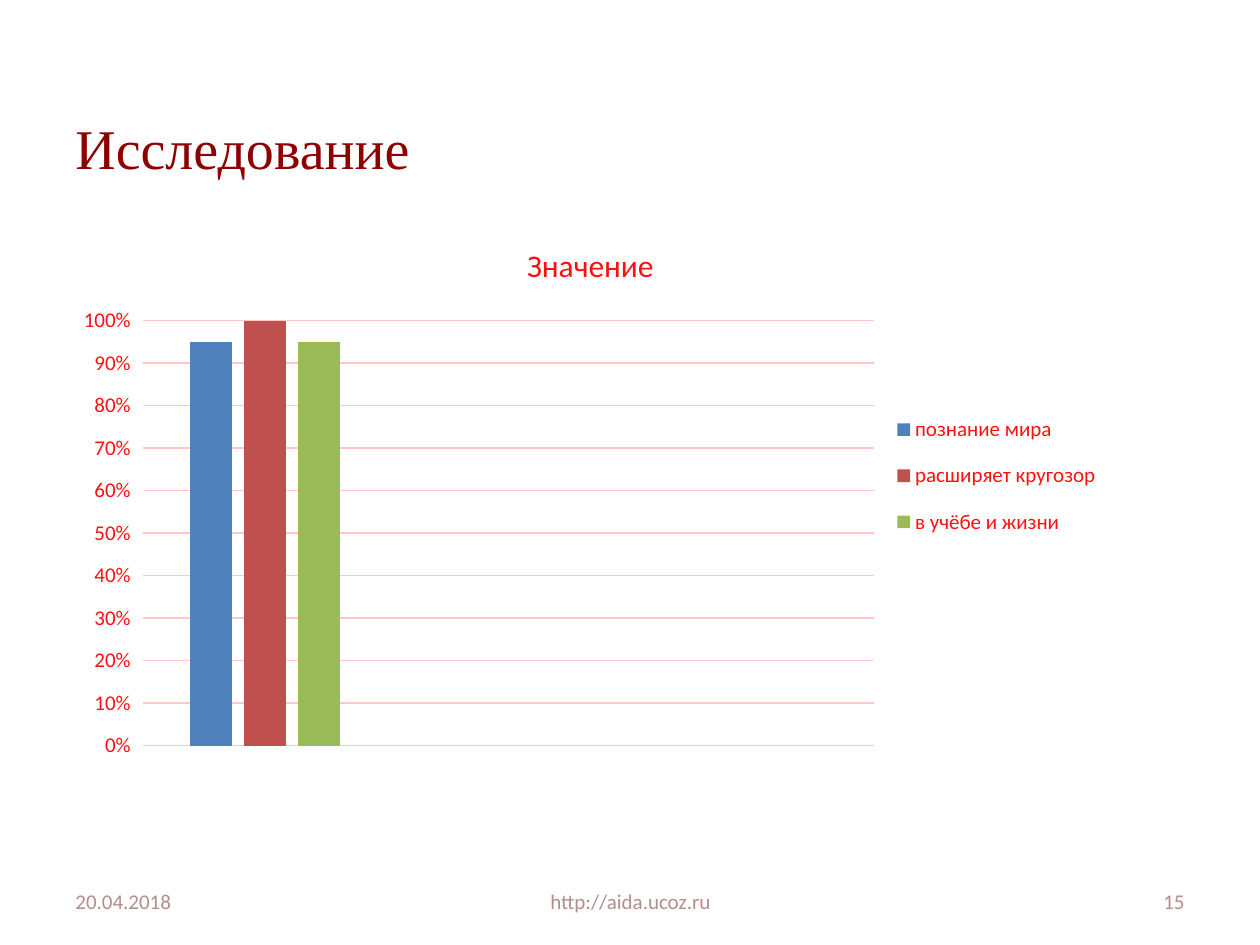
from lxml import etree
from pptx import Presentation
from pptx.chart.data import CategoryChartData
from pptx.dml.color import RGBColor
from pptx.enum.chart import XL_CHART_TYPE, XL_LEGEND_POSITION, XL_TICK_MARK
from pptx.enum.text import MSO_ANCHOR, PP_ALIGN
from pptx.oxml import parse_xml
from pptx.oxml.ns import nsdecls
from pptx.util import Pt

COLUMN = XL_CHART_TYPE.COLUMN_CLUSTERED
RIGHT_SIDE = XL_LEGEND_POSITION.RIGHT
TICK_OUT = XL_TICK_MARK.OUTSIDE
MIDDLE, BOTTOM = MSO_ANCHOR.MIDDLE, MSO_ANCHOR.BOTTOM
LEFT, CENTER, RIGHT = PP_ALIGN.LEFT, PP_ALIGN.CENTER, PP_ALIGN.RIGHT

SCALE = 914400 / 126
RED, DARK, MUTED, GRID = "FF1010", "8E0000", "B38C8C", "FFC8C8"
SERIES = [
    ("познание мира", 0.95, "4F81BD"),
    ("расширяет кругозор", 1, "C0504D"),
    ("в учёбе и жизни", 0.95, "9BBB59"),
]
FOOTER = [
    (63, 294, "20.04.2018", LEFT),
    (431, 399, "http://aida.ucoz.ru", CENTER),
    (903, 294, "15", RIGHT),
]


def px(n):
    return round(n * SCALE)


def color(text):
    return RGBColor.from_string(text)


def layout(x, y, w, h, inner=False):
    """Manual chart layout, in fractions of the chart frame."""
    target = '<c:layoutTarget val="inner"/>' if inner else ""
    return parse_xml(
        f'<c:layout {nsdecls("c")}><c:manualLayout>{target}'
        '<c:xMode val="edge"/><c:yMode val="edge"/>'
        f'<c:x val="{x}"/><c:y val="{y}"/><c:w val="{w}"/><c:h val="{h}"/>'
        "</c:manualLayout></c:layout>")


def place(part, new):
    """Give a plot area or legend its layout."""
    for old in part.xpath("c:layout"):
        part.remove(old)
    before = part.xpath("c:legendPos")
    if before:
        before[0].addnext(new)
    else:
        part.insert(0, new)


class Deck:
    def __init__(self, wide, high):
        self.prs = Presentation()
        self.prs.slide_width, self.prs.slide_height = px(wide), px(high)
        self.slide = self.prs.slides.add_slide(self.prs.slide_layouts[6])

    def font(self, font, size, tone, face="Calibri"):
        font.size, font.name = Pt(size), face
        font.bold = False
        font.color.rgb = color(tone)

    def text(self, box, words, size, tone, align=LEFT, face="Calibri",
             anchor=MIDDLE, foot=6):
        frame = self.slide.shapes.add_textbox(*map(px, box)).text_frame
        frame.word_wrap = True
        frame.vertical_anchor = anchor
        frame.margin_bottom = px(foot)
        para = frame.paragraphs[0]
        para.alignment = align
        run = para.add_run()
        run.text = words
        self.font(run.font, size, tone, face)

    def chart(self, box, title, series):
        data = CategoryChartData(number_format="0%")
        data.categories = ["1", "2", "3"]
        for name, value, _ in series:
            data.add_series(name, [value, None, None])
        chart = self.slide.shapes.add_chart(COLUMN, *map(px, box), data).chart
        self.font(chart.font, 10, DARK)

        chart.has_title = True
        run = chart.chart_title.text_frame.paragraphs[0].add_run()
        run.text = title
        self.font(run.font, 18, RED)
        chart.chart_title.include_in_layout = False

        plot = chart.plots[0]
        plot.gap_width, plot.overlap = 219, -27
        plot.vary_by_categories = False
        for item, (_, _, tone) in zip(plot.series, series):
            item.format.fill.solid()
            item.format.fill.fore_color.rgb = color(tone)

        chart.category_axis.visible = False
        axis = chart.value_axis
        axis.minimum_scale, axis.maximum_scale = 0, 1
        axis.major_unit = 0.1
        axis.major_tick_mark = TICK_OUT
        axis.format.line.fill.background()
        self.font(axis.tick_labels.font, 12, RED)
        axis.tick_labels.number_format = "0%"
        axis.tick_labels.number_format_is_linked = False
        line = axis.major_gridlines.format.line
        line.width = Pt(0.75)
        line.color.rgb = color(GRID)

        chart.has_legend = True
        legend = chart.legend
        legend.position = RIGHT_SIDE
        legend.include_in_layout = False
        self.font(legend.font, 12, RED)
        root = plot._element.getparent()
        place(root, layout(0.076, 0.183, 0.693, 0.773, inner=True))
        place(legend._element, layout(0.77, 0.32, 0.23, 0.29))

    def save(self):
        self.prs.save("out.pptx")


def main():
    deck = Deck(1260, 945)
    deck.text((63, 38, 1134, 157), "Исследование", 32, DARK,
              face="Times New Roman", anchor=BOTTOM, foot=14)
    deck.chart((63, 220, 1055, 550), "Значение", SERIES)
    for left, wide, words, align in FOOTER:
        deck.text((left, 876, wide, 50), words, 12, MUTED, align)
    deck.save()


if __name__ == "__main__":
    main()
